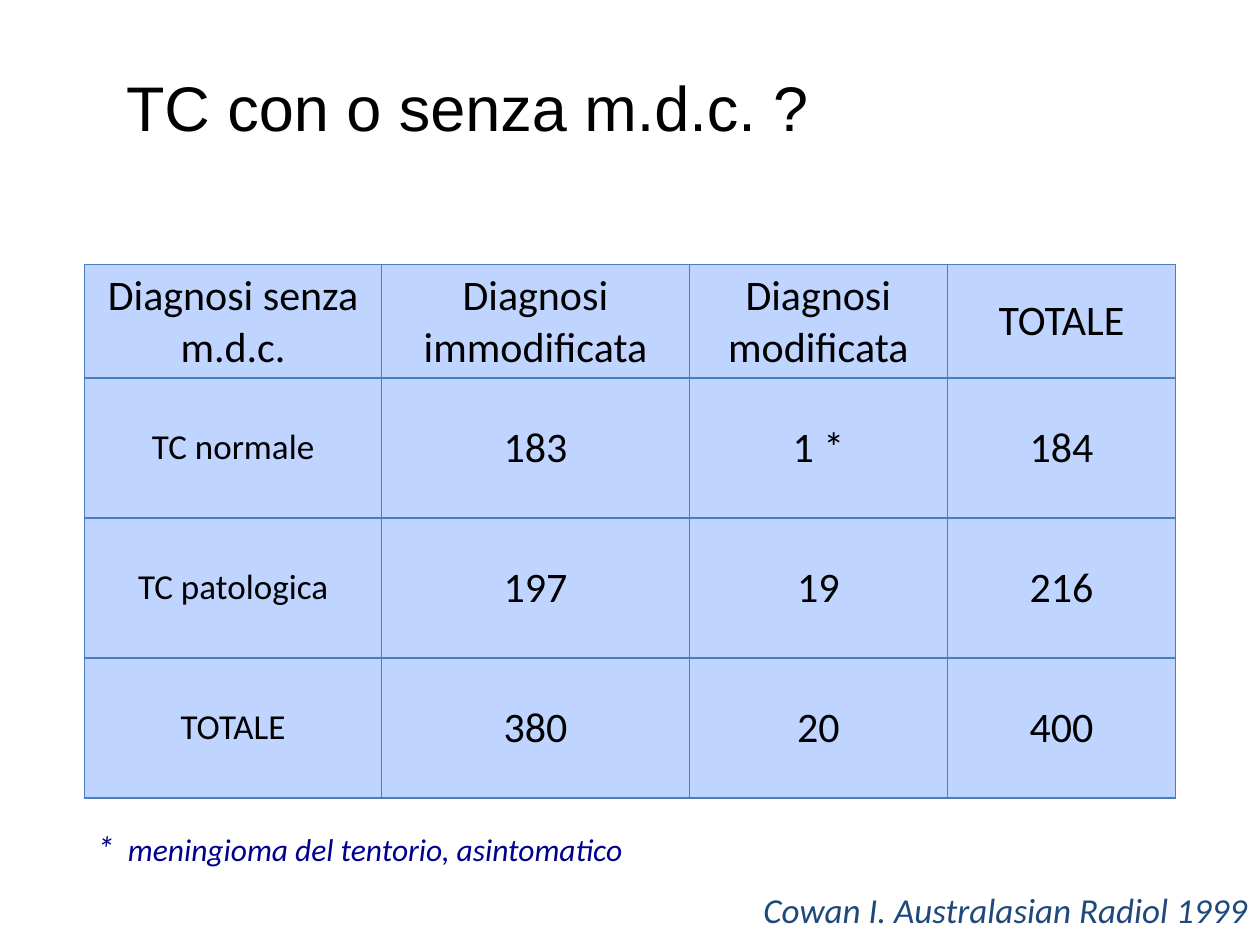
from lxml.etree import SubElement
from pptx import Presentation
from pptx.dml.color import RGBColor
from pptx.enum.text import MSO_ANCHOR, PP_ALIGN
from pptx.oxml.ns import qn
from pptx.util import Pt

COLORS = {"text": "000000", "cell": "BFD4FF", "border": "4B7EBC",
          "note": "000090", "citation": "1F497D"}
TITLE = "TC con o senza m.d.c. ?"
ROWS = [
    ["Diagnosi senza m.d.c.", "Diagnosi immodificata", "Diagnosi modificata", "TOTALE"],
    ["TC normale", "183", "1 *", "184"],
    ["TC patologica", "197", "19", "216"],
    ["TOTALE", "380", "20", "400"],
]
NOTE = [("*", 20), ("\tmeningioma del tentorio, asintomatico", 18)]
CITATION = [("Cowan I. Australasian Radiol 1999", 20)]

COLUMN_WIDTHS = [169.92, 175.68, 147.6, 130.32]
ROW_HEIGHTS = [64.8, 80, 80, 80]
TABLE_LEFT, TABLE_TOP = 48.24, 151.2
NOTE_INDENT = 17.8


def set_attributes(target, values):
    for name, value in values.items():
        setattr(target, name, value)


def add_run(paragraph, text, size, color, name="Calibri", italic=False):
    run = paragraph.add_run()
    run.text = text
    set_attributes(run.font, {"size": Pt(size), "name": name, "italic": italic})
    run.font.color.rgb = RGBColor.from_string(COLORS[color])


def add_caption(slide, left, top, runs, color, alignment):
    box = slide.shapes.add_textbox(Pt(left), Pt(top), Pt(530), Pt(31))
    box.text_frame.word_wrap = True
    paragraph = box.text_frame.paragraphs[0]
    paragraph.alignment = alignment
    for text, size in runs:
        add_run(paragraph, text, size, color, italic=True)
    return paragraph


def add_borders(cell):
    properties = cell._tc.get_or_add_tcPr()
    for index, side in enumerate(("lnL", "lnR", "lnT", "lnB")):
        line = properties.makeelement(qn(f"a:{side}"), {"w": str(Pt(0.75))})
        fill = SubElement(line, qn("a:solidFill"))
        SubElement(fill, qn("a:srgbClr"), val=COLORS["border"])
        properties.insert(index, line)


def add_results_table(slide):
    frame = slide.shapes.add_table(
        len(ROWS), len(COLUMN_WIDTHS), Pt(TABLE_LEFT), Pt(TABLE_TOP),
        Pt(sum(COLUMN_WIDTHS)), Pt(sum(ROW_HEIGHTS)))
    table = frame.table
    set_attributes(table, {"first_row": False, "horz_banding": False})
    for column, width in zip(table.columns, COLUMN_WIDTHS):
        column.width = Pt(width)
    for row_index, (row, height) in enumerate(zip(table.rows, ROW_HEIGHTS)):
        row.height = Pt(height)
        for column_index, cell in enumerate(row.cells):
            cell.vertical_anchor = MSO_ANCHOR.MIDDLE
            cell.fill.solid()
            cell.fill.fore_color.rgb = RGBColor.from_string(COLORS["cell"])
            add_borders(cell)
            paragraph = cell.text_frame.paragraphs[0]
            paragraph.alignment = PP_ALIGN.CENTER
            size = 20 if row_index and not column_index else 24
            add_run(paragraph, ROWS[row_index][column_index], size, "text")


def main():
    presentation = Presentation()
    set_attributes(presentation, {"slide_width": Pt(720), "slide_height": Pt(540)})
    slide = presentation.slides.add_slide(presentation.slide_layouts[5])

    title = slide.shapes.title
    set_attributes(title, {"left": Pt(54), "top": Pt(20.16),
                           "width": Pt(612), "height": Pt(67.68)})
    set_attributes(title.text_frame, {"vertical_anchor": MSO_ANCHOR.MIDDLE,
                                      "margin_left": Pt(18), "margin_top": Pt(17)})
    heading = title.text_frame.paragraphs[0]
    heading.alignment = PP_ALIGN.LEFT
    add_run(heading, TITLE, 36, "text", name="Arial")

    add_caption(slide, 190, 504, CITATION, "citation", PP_ALIGN.RIGHT)
    add_results_table(slide)
    note = add_caption(slide, TABLE_LEFT, 468.72, NOTE, "note", PP_ALIGN.LEFT)
    properties = note._p.get_or_add_pPr()
    properties.set("marL", str(Pt(NOTE_INDENT)))
    properties.set("indent", str(-Pt(NOTE_INDENT)))

    presentation.save("out.pptx")


if __name__ == "__main__":
    main()
